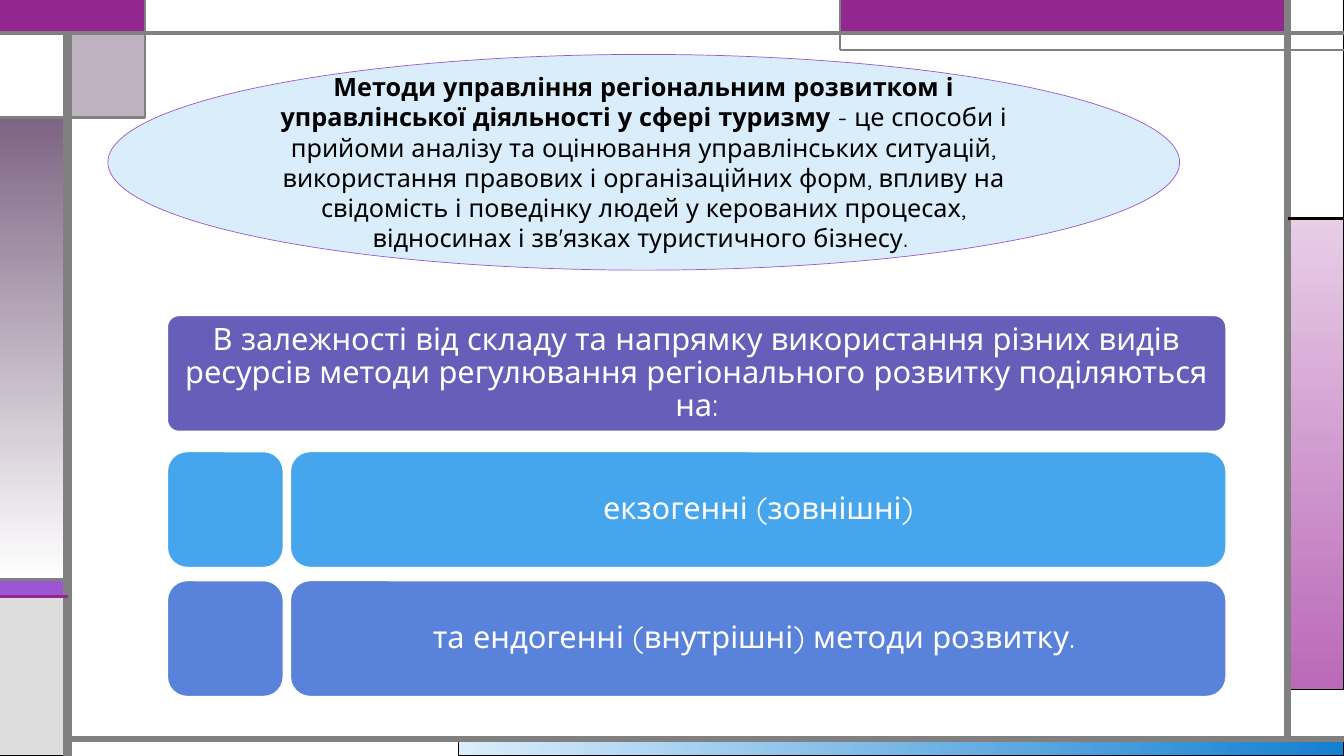
from dataclasses import dataclass

from lxml import etree
from pptx import Presentation
from pptx.dml.color import RGBColor
from pptx.enum.shapes import MSO_CONNECTOR, MSO_SHAPE
from pptx.enum.text import MSO_ANCHOR, PP_ALIGN
from pptx.oxml.ns import qn
from pptx.util import Inches, Pt

RECT, ROUND, OVAL = MSO_SHAPE.RECTANGLE, MSO_SHAPE.ROUNDED_RECTANGLE, MSO_SHAPE.OVAL
LINE = MSO_CONNECTOR.STRAIGHT
MIDDLE, CENTER = MSO_ANCHOR.MIDDLE, PP_ALIGN.CENTER


@dataclass(frozen=True)
class Theme:
    font: str = "Quicksand"
    lead: int = 18
    body: int = 22
    white: str = "FFFFFF"
    black: str = "000000"
    gray: str = "808080"
    silver: str = "DDDDDD"
    plum: str = "92278F"
    mauve: str = "7E6583"
    violet: str = "9B57D3"
    iris: str = "755DD9"
    indigo: str = "665EB8"
    sky: str = "45A5ED"
    azure: str = "5982DB"
    ice: str = "DAEDFB"
    ocean: str = "1480D1"
    blush: str = "E8CDE7"
    orchid: str = "BA69B8"


T = Theme()

# Grid lines of the frame, in inches
COLS = (0, 0.67, 1.44, 4.55, 8.33, 12.77, 13.33)
ROWS = (0, 0.33, 0.5, 1.17, 2.17, 5.75, 5.92, 6.84, 7.33, 7.5)

# Grid of the method panels, in inches
LEFT, RIGHT, BAR = 1.66, 12.16, 1.15
HEAD, FIRST, STEP, GAP = 3.13, 4.48, 1.28, 0.07

TITLE = "Методи управління регіональним розвитком і управлінської діяльності у сфері туризму "
ABOUT = (
    "- це способи і прийоми аналізу та оцінювання управлінських ситуацій, "
    "використання правових і організаційних форм, впливу на свідомість і поведінку "
    "людей у керованих процесах, відносинах і зв'язках туристичного бізнесу. "
)
INTRO = (
    "В залежності від складу та напрямку використання різних видів ресурсів "
    "методи регулювання регіонального розвитку поділяються на:"
)
KINDS = (
    ("екзогенні (зовнішні)", T.sky),
    ("та ендогенні (внутрішні) методи розвитку. ", T.azure),
)

# Frame tiles: first column, first row, last column, last row, fill, line, width
TILES = (
    (3, 8, 6, 9, (T.ice, T.ocean, 0), T.black, 0.75),
    (5, 4, 6, 7, (T.blush, T.orchid, 270), T.black, 0.75),
    (0, 5, 1, 6, T.violet, T.black, 0.75),
    (0, 6, 1, 9, T.silver, T.black, 0.75),
    (5, 0, 6, 4, T.white, T.black, 0.75),
    (4, 0, 5, 1, T.plum, T.iris, 0.75),
    (1, 1, 2, 3, T.mauve, T.black, 0.75),
    (0, 3, 1, 5, (T.mauve, T.white, 270), T.black, 0.75),
    (0, 1, 1, 3, T.white, T.black, 0.75),
    (0, 0, 2, 1, T.plum, T.plum, 1.5),
    (2, 0, 4, 1, T.white, T.gray, 0.75),
)

# Frame rules: from column and row, to column and row, colour, width
RULES = (
    (1, 9, 1, 1, T.gray, 6),
    (1, 8, 6, 8, T.gray, 4.5),
    (5, 8, 5, 0, T.gray, 4.5),
    (0, 1, 6, 1, T.gray, 3),
    (6, 2, 4, 2, T.gray, 1.5),
    (4, 2, 4, 0, T.gray, 1.5),
    (5, 4, 6, 4, T.black, 2.25),
    (2, 0, 2, 3, T.gray, 1.5),
    (2, 3, 0, 3, T.gray, 2.25),
    (1, 5, 0, 5, T.gray, 2.25),
    (1, 6, 0, 6, T.plum, 2.25),
)


def rgb(tone):
    return RGBColor.from_string(tone)


def paint(fill, tone):
    """Fill with one colour, or with a (start, end, angle) gradient."""
    if isinstance(tone, str):
        fill.solid()
        fill.fore_color.rgb = rgb(tone)
        return
    *ends, angle = tone
    fill.gradient()
    fill.gradient_angle = angle
    for stop, end in zip(fill.gradient_stops, ends):
        stop.color.rgb = rgb(end)


def fade(shape, share):
    tint = next(shape.fill._xPr.iter(qn("a:srgbClr")))
    etree.SubElement(tint, qn("a:alpha")).set("val", str(share * 1000))


def block(slide, kind, box, tone, edge, width):
    shape = slide.shapes.add_shape(kind, *map(Inches, box))
    shape.shadow.inherit = False
    paint(shape.fill, tone)
    shape.line.color.rgb = rgb(edge)
    shape.line.width = Pt(width)
    return shape


def rule(slide, start, end, tone, width):
    line = slide.shapes.add_connector(LINE, *map(Inches, start + end))
    line.line.color.rgb = rgb(tone)
    line.line.width = Pt(width)
    etree.SubElement(line._element.spPr, qn("a:effectLst"))


def write(shape, parts, size, tone, pad=(0.1, 0.05), space=1.0):
    """Centre (text, bold) parts in the shape."""
    frame = shape.text_frame
    frame.word_wrap = True
    frame.vertical_anchor = MIDDLE
    frame.margin_left = frame.margin_right = Inches(pad[0])
    frame.margin_top = frame.margin_bottom = Inches(pad[1])
    para = frame.paragraphs[0]
    para.alignment = CENTER
    para.line_spacing = space
    para.font.name = T.font
    para.font.size = Pt(size)
    para.font.color.rgb = rgb(tone)
    for text, bold in parts:
        run = para.add_run()
        run.text = text
        if bold:
            run.font.bold = True


def panel(slide, left, top, width, tone, bend, text="", pad=(0.17, 0.17)):
    shape = block(slide, ROUND, (left, top, width, BAR), tone, T.white, 1)
    shape.adjustments[0] = bend
    if text:
        write(shape, [(text, False)], T.body, T.white, pad, 0.9)


def border(slide):
    for c1, r1, c2, r2, tone, edge, width in TILES:
        x, y = COLS[c1], ROWS[r1]
        box = (x, y, COLS[c2] - x, ROWS[r2] - y)
        tile = block(slide, RECT, box, tone, edge, width)
        if tone == T.mauve:
            fade(tile, 50)
    for c1, r1, c2, r2, tone, width in RULES:
        rule(slide, (COLS[c1], ROWS[r1]), (COLS[c2], ROWS[r2]), tone, width)


def main():
    deck = Presentation()
    deck.slide_width, deck.slide_height = Inches(13.33), Inches(7.5)
    slide = deck.slides.add_slide(deck.slide_layouts[6])

    # Decorative frame
    border(slide)

    # Method panels
    panel(slide, LEFT, HEAD, RIGHT - LEFT, T.indigo, 0.1, INTRO, (0.05, 0.03))
    wide = LEFT + BAR + GAP
    for i, (text, tone) in enumerate(KINDS):
        top = FIRST + i * STEP
        panel(slide, LEFT, top, BAR, tone, 0.17)
        panel(slide, wide, top, RIGHT - wide, tone, 0.17, text)

    # Definition
    oval = block(slide, OVAL, (1.07, 0.54, 10.63, 2.14), T.ice, T.violet, 0.5)
    write(oval, [(TITLE, True), (ABOUT, False)], T.lead, T.black)

    deck.save("out.pptx")


if __name__ == "__main__":
    main()
